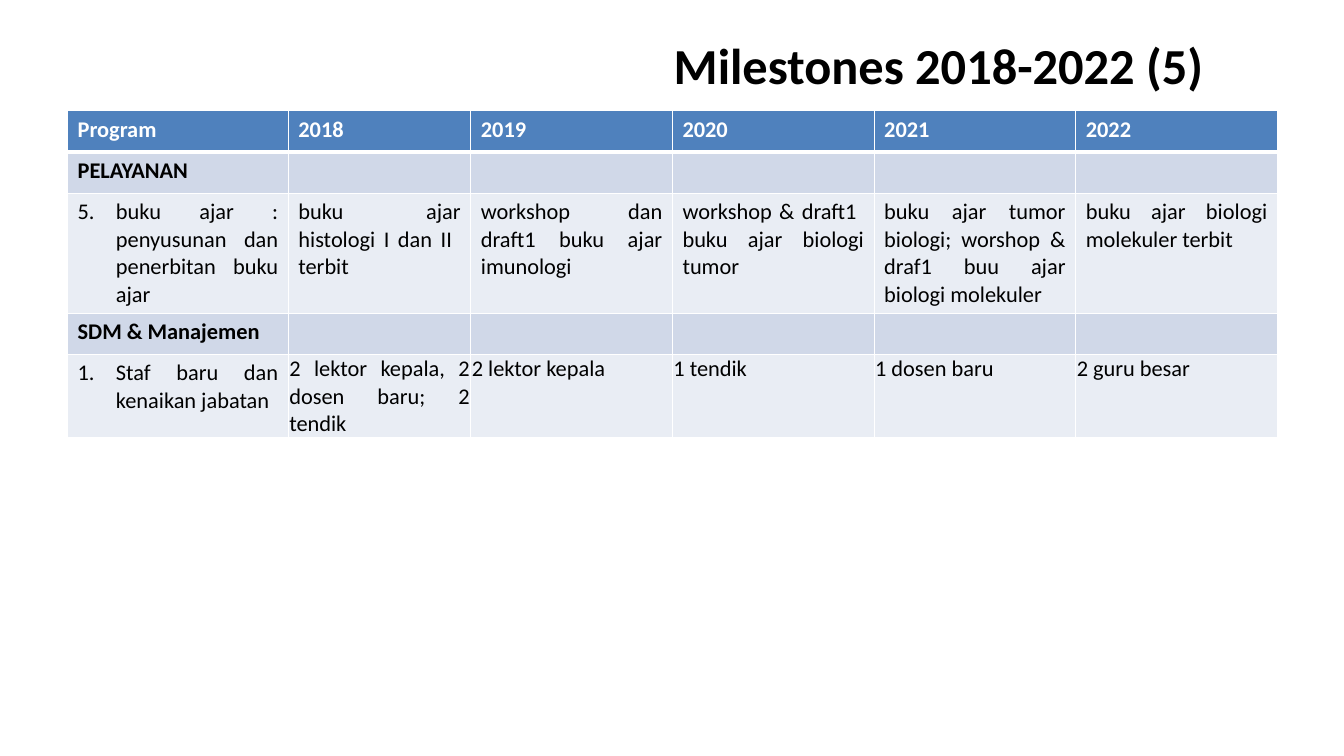
from lxml import etree
from pptx import Presentation
from pptx import util as u
from pptx.dml.color import RGBColor
from pptx.enum import text
from pptx.oxml.ns import qn

BLACK = RGBColor(0x00, 0x00, 0x00)
WHITE = RGBColor(0xFF, 0xFF, 0xFF)
HEADER_BLUE = RGBColor(0x4F, 0x81, 0xBD)
SECTION_BLUE = RGBColor(0xD0, 0xD8, 0xE8)
PROGRAM_BLUE = RGBColor(0xE9, 0xED, 0xF4)

TITLE_FONT = {"name": "Calibri", "size": u.Pt(36), "bold": True}
LEFT, JUSTIFY = text.PP_ALIGN.LEFT, text.PP_ALIGN.JUSTIFY

# Look of each kind of row: fill, text colour, bold, alignment
ROW_STYLES = {
    "header": (HEADER_BLUE, WHITE, True, LEFT),
    "section": (SECTION_BLUE, BLACK, True, LEFT),
    "program": (PROGRAM_BLUE, BLACK, False, JUSTIFY),
}

# Kind of row, number of the program, cell texts
MILESTONES = [
    ("header", None, ["Program", "2018", "2019", "2020", "2021", "2022"]),
    ("section", None, ["PELAYANAN"]),
    ("program", 5, [
        "buku ajar : penyusunan dan penerbitan buku ajar",
        "buku ajar histologi I dan II  terbit",
        "workshop dan draft1 buku ajar imunologi",
        "workshop & draft1  buku ajar biologi tumor",
        "buku ajar tumor biologi; worshop & draf1 buu ajar biologi molekuler",
        "buku ajar biologi molekuler terbit",
    ]),
    ("section", None, ["SDM & Manajemen"]),
    ("program", 1, [
        "Staf baru dan kenaikan jabatan",
        "2 lektor kepala, 2 dosen baru; 2 tendik",
        "2 lektor kepala",
        "1 tendik",
        "1 dosen baru",
        "2 guru besar",
    ]),
]
COLUMN_WIDTHS = [2.19, 1.81, 2, 2, 2, 2]
ROW_HEIGHT = 0.41
TIGHT_MARGINS = {"margin_left": 0.01, "margin_top": 0.01,
                 "margin_right": 0.01, "margin_bottom": 0}


def set_all(target, values):
    for name, value in values.items():
        setattr(target, name, value)


def number_paragraph(paragraph, start):
    """Automatic number with a hanging indent."""
    properties = paragraph._p.get_or_add_pPr()
    indent = u.Inches(0.38)
    properties.set("marL", str(indent))
    properties.set("indent", str(-indent))
    numbering = etree.SubElement(properties, qn("a:buAutoNum"), type="arabicPeriod")
    if start > 1:
        numbering.set("startAt", str(start))


def set_borders(cell, widths):
    """White lines on the four sides, placed ahead of the fill."""
    properties = cell._tc.get_or_add_tcPr()
    for position, (side, width) in enumerate(widths.items()):
        line = etree.Element(qn(f"a:ln{side}"), w=str(u.Pt(width)))
        fill = etree.SubElement(line, qn("a:solidFill"))
        etree.SubElement(fill, qn("a:srgbClr"), val=str(WHITE))
        properties.insert(position, line)


def add_title(slide, left, top, width, height):
    title = slide.shapes.title
    set_all(title, {"left": u.Inches(left), "top": u.Inches(top),
                    "width": u.Inches(width), "height": u.Inches(height)})
    frame = title.text_frame
    frame.text = "Milestones 2018-2022 (5)"
    set_all(frame, {"vertical_anchor": text.MSO_ANCHOR.MIDDLE, "word_wrap": True,
                    "auto_size": text.MSO_AUTO_SIZE.NONE})
    heading = frame.paragraphs[0]
    heading.alignment = text.PP_ALIGN.CENTER
    set_all(heading.runs[0].font, TITLE_FONT)
    heading.runs[0].font.color.rgb = BLACK


def fill_cell(cell, wording, kind, number):
    fill, colour, bold, alignment = ROW_STYLES[kind]
    cell.fill.solid()
    cell.fill.fore_color.rgb = fill
    if not wording:
        return
    paragraph = cell.text_frame.paragraphs[0]
    paragraph.alignment = alignment
    if number:
        number_paragraph(paragraph, number)
    run = paragraph.add_run()
    run.text = wording
    set_all(run.font, {"name": "Calibri", "size": u.Pt(16), "bold": bold})
    run.font.color.rgb = colour


def add_milestones(slide, left, top):
    table = slide.shapes.add_table(
        len(MILESTONES), len(COLUMN_WIDTHS), u.Inches(left), u.Inches(top),
        u.Inches(sum(COLUMN_WIDTHS)), u.Inches(ROW_HEIGHT * len(MILESTONES))).table
    for column, width in zip(table.columns, COLUMN_WIDTHS):
        column.width = u.Inches(width)

    last_row = len(MILESTONES) - 1
    for row, (kind, number, wordings) in enumerate(MILESTONES):
        table.rows[row].height = u.Inches(ROW_HEIGHT)
        for column in range(len(COLUMN_WIDTHS)):
            cell = table.cell(row, column)
            wording = wordings[column] if column < len(wordings) else ""
            fill_cell(cell, wording, kind, number if column == 0 else None)
            # The rule under the header is heavier
            set_borders(cell, {"L": 1, "R": 1, "T": 3 if row == 1 else 1,
                               "B": 3 if row == 0 else 1})
            # Staff figures sit close to the cell edges
            if row == last_row and column > 0:
                set_all(cell, {side: u.Inches(margin)
                               for side, margin in TIGHT_MARGINS.items()})


def main():
    deck = Presentation()
    set_all(deck, {"slide_width": u.Inches(13.33), "slide_height": u.Inches(7.5)})
    slide = deck.slides.add_slide(deck.slide_layouts.get_by_name("Title Only"))
    add_title(slide, 5.95, 0.3, 6.72, 0.68)
    add_milestones(slide, 0.67, 1.1)
    deck.save("out.pptx")


if __name__ == "__main__":
    main()
